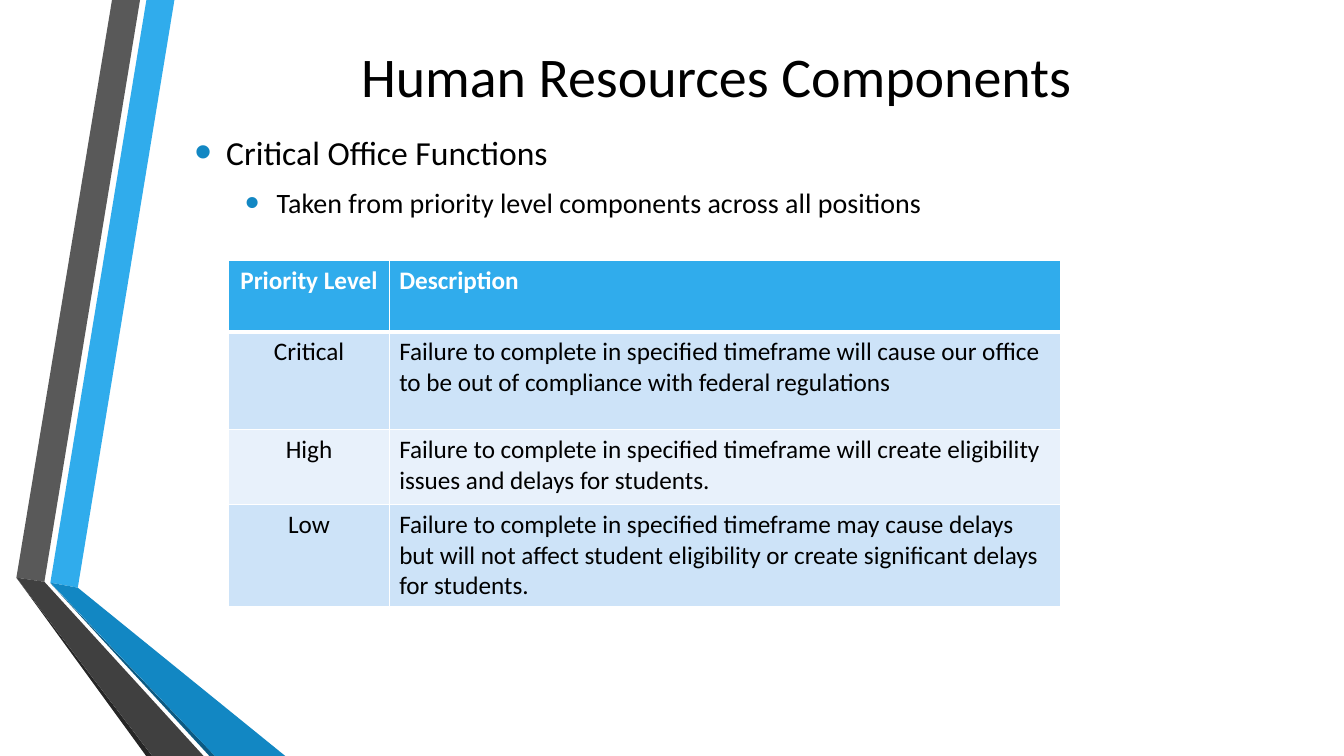
from pptx import Presentation
from pptx.dml.color import RGBColor
from pptx.enum.text import MSO_ANCHOR as Anchor, PP_ALIGN as Align
from pptx.oxml import parse_xml
from pptx.oxml.ns import nsdecls
from pptx.util import Pt

FONT = "Calibri"
BLACK = RGBColor(0x00, 0x00, 0x00)
WHITE = RGBColor(0xFF, 0xFF, 0xFF)
SKY = RGBColor(0x30, 0xAC, 0xEC)
BLUE = RGBColor(0x12, 0x87, 0xC3)
NAVY = RGBColor(0x0C, 0x5A, 0x82)
GRAY = RGBColor(0x59, 0x59, 0x59)
CHARCOAL = RGBColor(0x40, 0x40, 0x40)
SOOT = RGBColor(0x26, 0x26, 0x26)
BAND_DARK = RGBColor(0xCD, 0xE3, 0xF8)
BAND_LIGHT = RGBColor(0xE8, 0xF1, 0xFB)

# Ribbon outlines in points, from back to front
RIBBONS = [
    (SKY, [(36, 416.2), (55.6, 419.8), (124.6, 0), (104.6, 0)]),
    (GRAY, [(100, 0), (80, 0), (11.7, 412.6), (31.7, 415.6)]),
    (SOOT, [(11.7, 412.6), (104.4, 540), (108.7, 540)]),
    (NAVY, [(36, 416.6), (149.6, 540), (153.6, 540)]),
    (BLUE, [(36, 416.2), (153.6, 540), (203.8, 540), (55.6, 419.8)]),
    (CHARCOAL, [(11.7, 412.6), (108.7, 540), (145.4, 540), (31.7, 415.6)]),
]

BULLETS = [
    ("Critical Office Functions", 24, 22.5),
    ("Taken from priority level components across all positions", 20, 58.5),
]

COLUMN_WIDTHS = [114.5, 479.5]
ROW_HEIGHTS = [51, 70, 53.3, 73]
PRIORITIES = [
    ("Priority Level", "Description"),
    ("Critical", "Failure to complete in specified timeframe will cause our office "
                 "to be out of compliance with federal regulations"),
    ("High", "Failure to complete in specified timeframe will create eligibility "
             "issues and delays for students."),
    ("Low", "Failure to complete in specified timeframe may cause delays but will not "
            "affect student eligibility or create significant delays for students."),
]


def add_ribbon(page, color, points):
    corners = [(Pt(x), Pt(y)) for x, y in points]
    builder = page.shapes.build_freeform(*corners[0])
    builder.add_line_segments(corners[1:], close=True)
    ribbon = builder.convert_to_shape()
    ribbon.shadow.inherit = False
    ribbon.fill.solid()
    ribbon.fill.fore_color.rgb = color
    ribbon.line.fill.background()


def add_box(page, left, top, width, height, anchor):
    box = page.shapes.add_textbox(Pt(left), Pt(top), Pt(width), Pt(height))
    frame = box.text_frame
    frame.word_wrap = True
    frame.vertical_anchor = anchor
    return frame


def add_span(para, text, size, color=BLACK, bold=False):
    span = para.add_run()
    span.text = text
    span.font.name = FONT
    span.font.size = Pt(size)
    span.font.bold = bold
    span.font.color.rgb = color


def set_bullet(para, margin):
    properties = para._p.get_or_add_pPr()
    properties.set("marL", str(Pt(margin)))
    properties.set("indent", str(Pt(-22.5)))
    for xml in (
        f'<a:buClr {nsdecls("a")}><a:srgbClr val="{BLUE}"/></a:buClr>',
        f'<a:buSzPct {nsdecls("a")} val="145000"/>',
        f'<a:buFont {nsdecls("a")} typeface="Arial"/>',
        f'<a:buChar {nsdecls("a")} char="•"/>',
    ):
        properties.append(parse_xml(xml))


def add_bullets(page):
    frame = add_box(page, 132, 90.4, 657, 75, Anchor.TOP)
    for index, (text, size, margin) in enumerate(BULLETS):
        para = frame.add_paragraph() if index else frame.paragraphs[0]
        para.space_before = Pt(4 * index)
        para.space_after = Pt(6)
        set_bullet(para, margin)
        add_span(para, text, size)


def set_borders(cell, widths):
    properties = cell._tc.get_or_add_tcPr()
    for index, (side, width) in enumerate(widths.items()):
        properties.insert(index, parse_xml(
            f'<a:ln{side} {nsdecls("a")} w="{Pt(width)}"><a:solidFill>'
            f'<a:srgbClr val="{WHITE}"/></a:solidFill></a:ln{side}>'))


def add_priority_table(page):
    table = page.shapes.add_table(
        len(ROW_HEIGHTS), len(COLUMN_WIDTHS), Pt(163.5), Pt(186),
        Pt(sum(COLUMN_WIDTHS)), Pt(sum(ROW_HEIGHTS))).table
    for column, width in zip(table.columns, COLUMN_WIDTHS):
        column.width = Pt(width)
    for row_index, texts in enumerate(PRIORITIES):
        table.rows[row_index].height = Pt(ROW_HEIGHTS[row_index])
        header = row_index == 0
        band = BAND_DARK if row_index % 2 else BAND_LIGHT
        for column_index, text in enumerate(texts):
            cell = table.cell(row_index, column_index)
            cell.fill.solid()
            cell.fill.fore_color.rgb = SKY if header else band
            set_borders(cell, {"L": 1, "R": 1, "T": 3 if row_index == 1 else 1,
                               "B": 3 if header else 1})
            para = cell.text_frame.paragraphs[0]
            para.alignment = Align.LEFT if column_index else Align.CENTER
            add_span(para, text, 18, WHITE if header else BLACK, header)


def main():
    deck = Presentation()
    deck.slide_width, deck.slide_height = Pt(960), Pt(540)
    page = deck.slides.add_slide(deck.slide_layouts[6])

    # Folded ribbons on the left
    for color, points in RIBBONS:
        add_ribbon(page, color, points)

    # Title
    title = add_box(page, 162, 18, 699, 72, Anchor.MIDDLE).paragraphs[0]
    title.alignment = Align.CENTER
    add_span(title, "Human Resources Components", 40)

    # Bullets and table
    add_bullets(page)
    add_priority_table(page)
    deck.save("out.pptx")


if __name__ == "__main__":
    main()
